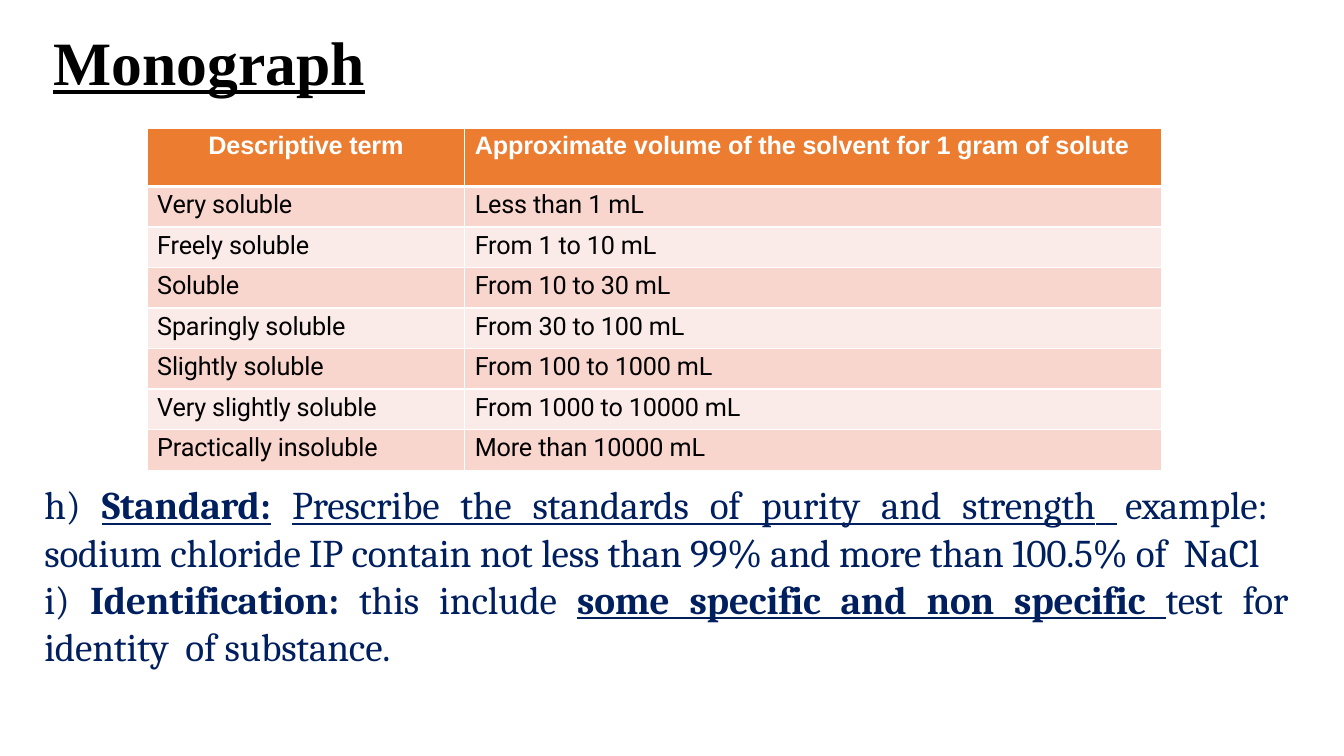
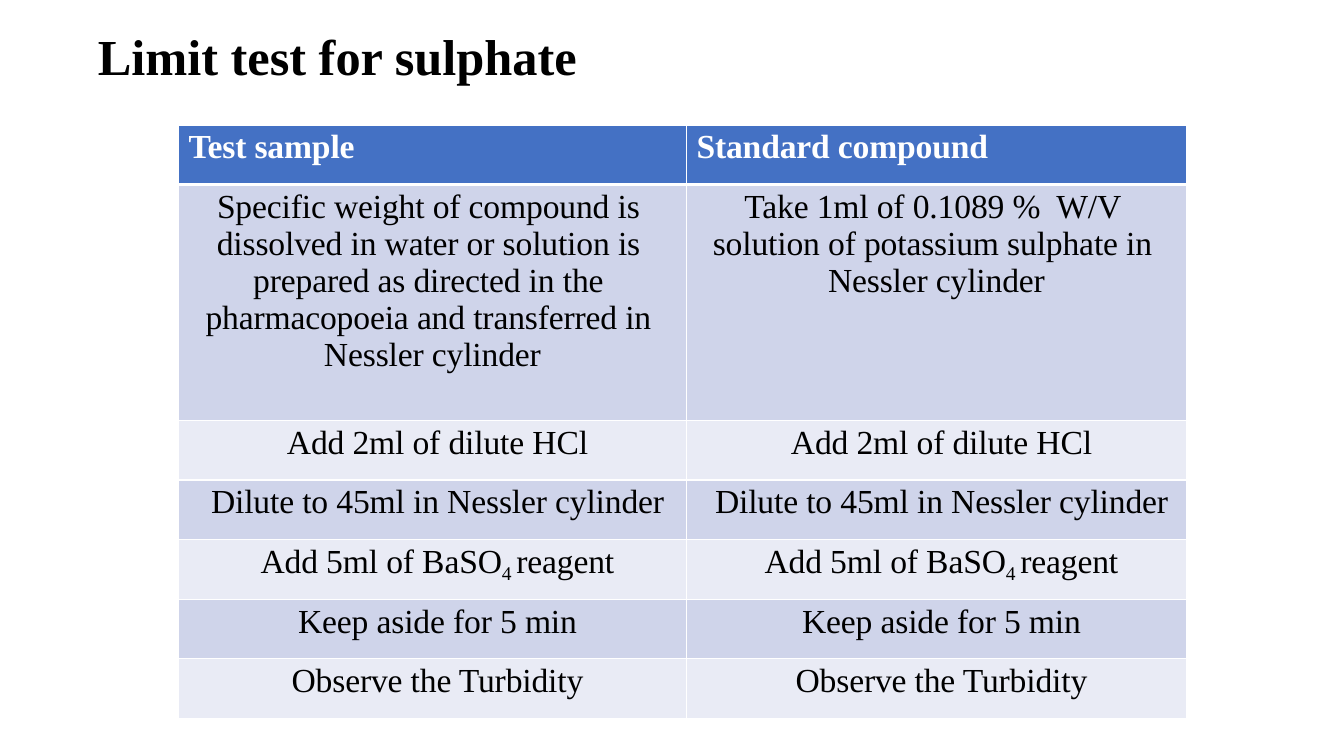
from dataclasses import dataclass

from lxml.etree import SubElement
from pptx import Presentation
from pptx.dml.color import RGBColor
from pptx.enum.text import MSO_ANCHOR, MSO_AUTO_SIZE, PP_ALIGN
from pptx.oxml.ns import qn
from pptx.util import Inches, Pt


@dataclass(frozen=True)
class Banding:
    """Fills of a table's header and alternating body rows."""
    header: str
    odd: str
    even: str


@dataclass(frozen=True)
class Theme:
    """Colours, fonts and type sizes of the presentation."""
    black: str = "000000"
    white: str = "FFFFFF"
    navy: str = "001F5F"
    orange: Banding = Banding("EC7C30", "F8D6CD", "FBEBE8")
    blue: Banding = Banding("4471C4", "CFD4EA", "E9EBF5")
    serif: str = "Times New Roman"
    reading: str = "Cambria"
    label: str = "Arial"
    entry: str = "Roboto"
    topic_size: int = 44
    subtopic_size: int = 36
    reading_size: int = 28
    procedure_size: int = 24
    term_size: int = 18
    hairline: int = 1
    header_rule: int = 3


@dataclass(frozen=True)
class Span:
    """A stretch of text with its own emphasis."""
    text: str
    bold: bool = False
    underline: bool = False
    baseline: int = 0
    spacing: float = -0.1


class Deck:
    """Holds the style and the current slide, on a grid of tenths of an inch."""

    def __init__(self, theme, columns=133.33, rows=75):
        self.theme = theme
        self.presentation = Presentation()
        self.presentation.slide_width = self.grid(columns)
        self.presentation.slide_height = self.grid(rows)
        self.slide = None

    def grid(self, count):
        """Convert grid units to a length."""
        return Inches(count / 10)

    def box(self, *counts):
        """Convert left, top, width and height to lengths."""
        return [self.grid(count) for count in counts]

    def style(self, run, font, size, colour, bold=False, underline=False):
        """Format one run."""
        run.font.name = font
        run.font.size = Pt(size)
        run.font.color.rgb = RGBColor.from_string(colour)
        run.font.bold = bold
        run.font.underline = underline

    def compose(self, paragraph, content, font, size, colour, bold=False):
        """Fill a paragraph from a string or a list of spans."""
        spans = [Span(content)] if isinstance(content, str) else content
        for span in spans:
            run = paragraph.add_run()
            run.text = span.text
            self.style(run, font, size, colour, bold or span.bold, span.underline)
            properties = run._r.get_or_add_rPr()
            properties.set("spc", str(round(span.spacing * 100)))
            if span.baseline:
                properties.set("baseline", str(span.baseline * 1000))

    def frame(self, text_frame, anchor):
        """Give a text frame the shared margins and wrapping."""
        text_frame.margin_left = text_frame.margin_right = 0
        text_frame.margin_top, text_frame.margin_bottom = self.grid(0.1), 0
        text_frame.word_wrap = True
        text_frame.auto_size = MSO_AUTO_SIZE.NONE
        text_frame.vertical_anchor = anchor

    def titled_slide(self, text, place, size, underline=False):
        """Start a slide with a title."""
        layout = self.presentation.slide_layouts[5]
        self.slide = self.presentation.slides.add_slide(layout)
        title = self.slide.shapes.title
        title.left, title.top, title.width, title.height = self.box(*place)
        title.text_frame.text = text
        self.frame(title.text_frame, MSO_ANCHOR.MIDDLE)
        heading = title.text_frame.paragraphs[0]
        heading.alignment = PP_ALIGN.LEFT
        heading.space_before = Pt(1)
        self.style(heading.runs[0], self.theme.serif, size, self.theme.black,
                   True, underline)

    def passage(self, paragraphs, place):
        """Add justified reading text."""
        theme = self.theme
        text_frame = self.slide.shapes.add_textbox(*self.box(*place)).text_frame
        self.frame(text_frame, MSO_ANCHOR.TOP)
        for index, content in enumerate(paragraphs):
            paragraph = text_frame.add_paragraph() if index else text_frame.paragraphs[0]
            paragraph.alignment = PP_ALIGN.JUSTIFY
            self.compose(paragraph, content, theme.reading, theme.reading_size, theme.navy)

    def borders(self, cell, top, bottom):
        """Draw white rules around a cell."""
        widths = {"L": self.theme.hairline, "R": self.theme.hairline,
                  "T": top, "B": bottom}
        properties = cell._tc.get_or_add_tcPr()
        for side, width in widths.items():
            line = SubElement(properties, qn(f"a:ln{side}"), w=str(int(Pt(width))))
            fill = SubElement(line, qn("a:solidFill"))
            SubElement(fill, qn("a:srgbClr"), val=self.theme.white)

    def table(self, entries, corner, widths, heights, banding, fonts, size,
              header_alignments, body_alignment, padded_rows=()):
        """Add a banded table with a header row."""
        theme = self.theme
        place = self.box(*corner, sum(widths), sum(heights))
        table = self.slide.shapes.add_table(len(heights), len(widths), *place).table
        for column, width in zip(table.columns, widths):
            column.width = self.grid(width)
        for row, height in zip(table.rows, heights):
            row.height = self.grid(height)
        for row_index, contents in enumerate(entries):
            is_header = row_index == 0
            band = banding.odd if row_index % 2 else banding.even
            for column_index, content in enumerate(contents):
                cell = table.cell(row_index, column_index)
                cell.margin_left = self.grid(1)
                cell.margin_right = self.grid(1 if row_index in padded_rows else 0)
                cell.margin_top, cell.margin_bottom = self.grid(0.4), 0
                self.borders(cell,
                             theme.header_rule if row_index == 1 else theme.hairline,
                             theme.header_rule if is_header else theme.hairline)
                cell.fill.solid()
                cell.fill.fore_color.rgb = RGBColor.from_string(
                    banding.header if is_header else band)
                paragraph = cell.text_frame.paragraphs[0]
                paragraph.space_before = Pt(3)
                paragraph.alignment = (header_alignments[column_index] if is_header
                                       else body_alignment)
                self.compose(paragraph, content, fonts[0 if is_header else 1], size,
                             theme.white if is_header else theme.black, is_header)


def monograph(deck):
    """Build the solubility terms and monograph standards."""
    theme = deck.theme
    deck.titled_slide("Monograph", (5.3, 2.2, 33.2, 7.5), theme.topic_size, True)
    solubility = [
        ("Descriptive term", "Approximate volume of the solvent for 1 gram of solute"),
        ("Very soluble", "Less than 1 mL"),
        ("Freely soluble", "From 1 to 10 mL"),
        ("Soluble", "From 10 to 30 mL"),
        ("Sparingly soluble", "From 30 to 100 mL"),
        ("Slightly soluble", "From 100 to 1000 mL"),
        ("Very slightly soluble", "From 1000 to 10000 mL"),
        ("Practically insoluble", "More than 10000 mL"),
    ]
    deck.table(solubility, (14.6, 12.7), (31.5, 69.1), [5.8] + [4.02] * 7,
               theme.orange, (theme.label, theme.entry), theme.term_size,
               (PP_ALIGN.CENTER, PP_ALIGN.LEFT), PP_ALIGN.LEFT, padded_rows=(0,))
    standard = [
        Span("h) "),
        Span("Standard:", bold=True, underline=True),
        Span(" "),
        Span("Prescribe the standards of purity and strength", underline=True),
        Span(" ", underline=True, spacing=6),
        Span("example:  sodium chloride IP contain not less than 99% "
             "and more than 100.5% of  NaCl"),
    ]
    identification = [
        Span("i) "),
        Span("Identification:", bold=True),
        Span(" this include "),
        Span("some specific and non specific ", bold=True, underline=True),
        Span("test for identity  of substance."),
    ]
    deck.passage([standard, identification], (4.4, 47.6, 123.4, 23.6))


def sulphate_test(deck):
    """Build the steps of the sulphate limit test."""
    theme = deck.theme
    deck.titled_slide("Limit test for sulphate", (9.7, 2.3, 51.6, 6.2),
                      theme.subtopic_size)
    reagent = [Span("Add 5ml of BaSO"), Span("4 ", baseline=-21), Span("reagent")]
    shared_steps = ["Add 2ml of dilute HCl", "Dilute to 45ml in Nessler cylinder",
                    reagent, "Keep aside for 5 min", "Observe the Turbidity"]
    procedure = [
        ("Test sample", "Standard compound"),
        ("Specific weight of compound is  dissolved in water or solution is  "
         "prepared as directed in the  pharmacopoeia and transferred in  "
         "Nessler cylinder",
         "Take 1ml of 0.1089 %  W/V  solution of potassium sulphate in  "
         "Nessler cylinder"),
    ] + [(step, step) for step in shared_steps]
    deck.table(procedure, (17.7, 12.4), (50.4, 49.6), [5.9, 23.4] + [5.92] * 5,
               theme.blue, (theme.serif, theme.serif), theme.procedure_size,
               (PP_ALIGN.LEFT, PP_ALIGN.LEFT), PP_ALIGN.CENTER, padded_rows=(1,))


def main():
    """Build and save the presentation."""
    deck = Deck(Theme())
    monograph(deck)
    sulphate_test(deck)
    deck.presentation.save("out.pptx")


if __name__ == "__main__":
    main()
